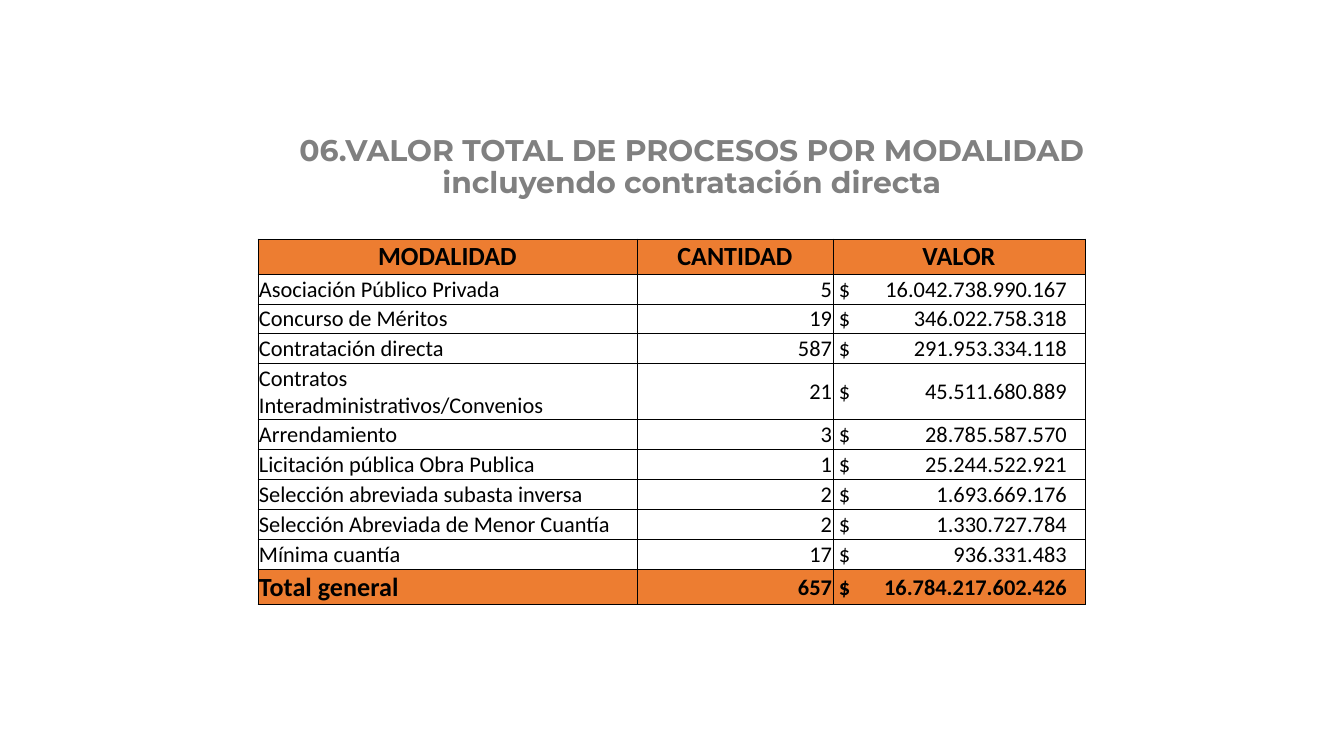
from pptx import Presentation
from pptx.dml.color import RGBColor
from pptx.enum.text import MSO_ANCHOR, PP_ALIGN
from pptx.oxml import parse_xml
from pptx.oxml.ns import nsdecls
from pptx.util import Emu, Pt

PX = 914400 / 134.4
BLACK = RGBColor(0x00, 0x00, 0x00)
GRAY = RGBColor(0x80, 0x80, 0x80)
ORANGE = RGBColor(0xED, 0x7D, 0x31)
LEFT, CENTER, RIGHT = PP_ALIGN.LEFT, PP_ALIGN.CENTER, PP_ALIGN.RIGHT
MIDDLE = MSO_ANCHOR.MIDDLE

TITLE = "06.VALOR TOTAL DE PROCESOS POR MODALIDAD\vincluyendo contratación directa"
HEADER = ("MODALIDAD", "CANTIDAD", "VALOR")
PROCESSES = [
    ("Asociación Público Privada", "5", "16.042.738.990.167"),
    ("Concurso de Méritos", "19", "346.022.758.318"),
    ("Contratación directa", "587", "291.953.334.118"),
    ("Contratos Interadministrativos/Convenios", "21", "45.511.680.889"),
    ("Arrendamiento", "3", "28.785.587.570"),
    ("Licitación pública Obra Publica", "1", "25.244.522.921"),
    ("Selección abreviada subasta inversa", "2", "1.693.669.176"),
    ("Selección Abreviada de Menor Cuantía", "2", "1.330.727.784"),
    ("Mínima cuantía", "17", "936.331.483"),
]
TOTAL = ("Total general", "657", "16.784.217.602.426")
COLUMN_WIDTHS = (379, 196, 252)
ROW_HEIGHTS = (35, 30, 30, 30, 56, 30, 30, 30, 30, 30, 35)
AMOUNT_TAB = 228


def px(length):
    """Convert pixels to EMU."""
    return Emu(round(length * PX))


def style_paragraph(paragraph, font_name, size, color, bold, alignment):
    """Set the alignment and font of a paragraph."""
    paragraph.alignment = alignment
    font = paragraph.font
    font.name = font_name
    font.size = Pt(size)
    font.bold = bold
    font.color.rgb = color


def add_title(slide):
    """Add the two-line heading."""
    box = slide.shapes.add_textbox(px(258), px(128), px(868), px(79))
    frame = box.text_frame
    frame.word_wrap = True
    frame.vertical_anchor = MIDDLE
    paragraph = frame.paragraphs[0]
    paragraph.text = TITLE
    paragraph.line_spacing = 0.9
    style_paragraph(paragraph, "Montserrat", 16, GRAY, True, CENTER)


def add_borders(cell):
    """Draw a thin black line on every side of a cell."""
    properties = cell._tc.get_or_add_tcPr()
    for side in ("lnL", "lnR", "lnT", "lnB"):
        properties.append(parse_xml(
            f'<a:{side} {nsdecls("a")} w="{Pt(0.5)}"><a:solidFill>'
            f'<a:srgbClr val="{BLACK}"/></a:solidFill></a:{side}>'))


def add_amount_tab(paragraph):
    """Add the right tab stop that lines up the amounts."""
    paragraph._p.get_or_add_pPr().append(parse_xml(
        f'<a:tabLst {nsdecls("a")}><a:tab pos="{px(AMOUNT_TAB)}" algn="r"/></a:tabLst>'))


def fill_cell(cell, text, size, bold, alignment, fill_color=None):
    """Write and format one table cell."""
    is_amount = text.startswith("$")
    cell.margin_left = px(6 if is_amount else 1)
    cell.margin_right = cell.margin_top = px(1)
    cell.margin_bottom = 0
    cell.vertical_anchor = MIDDLE
    add_borders(cell)
    if fill_color is None:
        cell.fill.background()
    else:
        cell.fill.solid()
        cell.fill.fore_color.rgb = fill_color
    paragraph = cell.text_frame.paragraphs[0]
    paragraph.text = text
    if is_amount:
        add_amount_tab(paragraph)
    style_paragraph(paragraph, "Calibri", size, BLACK, bold, alignment)


def fill_process_row(table, row, values, name_size=12, bold=False, fill_color=None):
    """Write a name, a count and an amount in one row."""
    name, count, amount = values
    fill_cell(table.cell(row, 0), name, name_size, bold, LEFT, fill_color)
    fill_cell(table.cell(row, 1), count, 12, bold, RIGHT, fill_color)
    fill_cell(table.cell(row, 2), f"$\t{amount}", 12, bold, LEFT, fill_color)


def add_process_table(slide):
    """Add the table of processes by type."""
    table = slide.shapes.add_table(
        len(ROW_HEIGHTS), len(COLUMN_WIDTHS), px(258), px(239),
        px(sum(COLUMN_WIDTHS)), px(sum(ROW_HEIGHTS))).table
    table.first_row = False
    table.horz_banding = False
    for column, width in zip(table.columns, COLUMN_WIDTHS):
        column.width = px(width)
    for row, height in zip(table.rows, ROW_HEIGHTS):
        row.height = px(height)
    for column, heading in enumerate(HEADER):
        fill_cell(table.cell(0, column), heading, 14, True, CENTER, ORANGE)
    for row, values in enumerate(PROCESSES, start=1):
        fill_process_row(table, row, values)
    fill_process_row(table, len(PROCESSES) + 1, TOTAL, 14, True, ORANGE)


def main():
    """Build and save the slide."""
    presentation = Presentation()
    presentation.slide_width = px(1344)
    presentation.slide_height = px(756)
    slide = presentation.slides.add_slide(presentation.slide_layouts[6])
    add_process_table(slide)
    add_title(slide)
    presentation.save("out.pptx")


if __name__ == "__main__":
    main()
